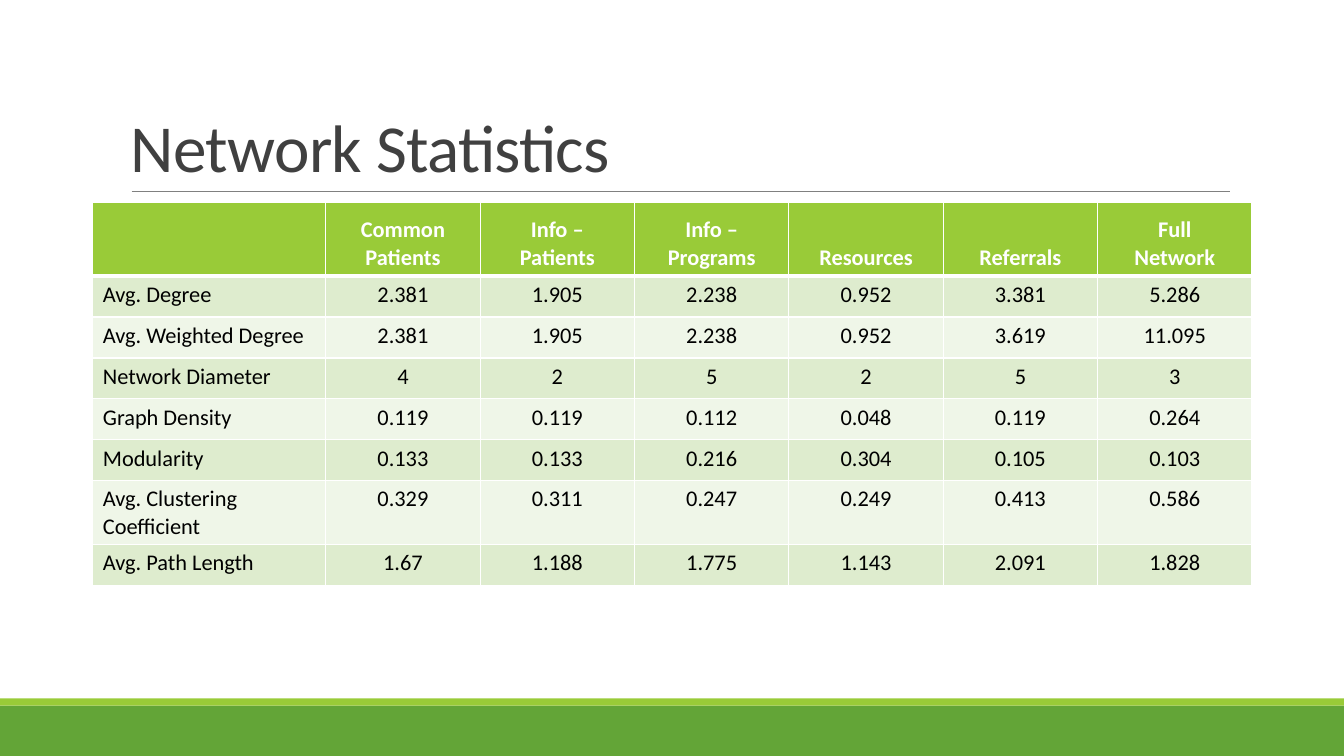
from lxml.etree import SubElement
from pptx import Presentation
from pptx.dml.color import RGBColor
from pptx.enum.shapes import MSO_CONNECTOR as Connector, MSO_SHAPE as Shape
from pptx.enum.text import MSO_ANCHOR as Anchor, PP_ALIGN as Align
from pptx.oxml.ns import qn
from pptx.util import Cm, Pt

COLORS = {
    "green": "63A537",
    "lime": "99CB38",
    "rule": "808080",
    "title": "404040",
    "band_dark": "DEECCE",
    "band_light": "EFF6E8",
    "black": "000000",
    "white": "FFFFFF",
}

HEADERS = ["", "Common Patients", "Info –\nPatients", "Info – Programs",
           "Resources", "Referrals", "Full\nNetwork"]
STATISTICS = [
    ["Avg. Degree", "2.381", "1.905", "2.238", "0.952", "3.381", "5.286"],
    ["Avg. Weighted Degree", "2.381", "1.905", "2.238", "0.952", "3.619", "11.095"],
    ["Network Diameter", "4", "2", "5", "2", "5", "3"],
    ["Graph Density", "0.119", "0.119", "0.112", "0.048", "0.119", "0.264"],
    ["Modularity", "0.133", "0.133", "0.216", "0.304", "0.105", "0.103"],
    ["Avg. Clustering Coefficient", "0.329", "0.311", "0.247", "0.249", "0.413", "0.586"],
    ["Avg. Path Length", "1.67", "1.188", "1.775", "1.143", "2.091", "1.828"],
]


class SlideBuilder:
    """Holds the style and the current slide; lengths are in centimetres."""

    font_name = "Calibri"

    def __init__(self, page):
        self.page = page

    def color(self, name):
        return RGBColor.from_string(COLORS[name])

    def style(self, para, size, color, bold=False, align=Align.LEFT):
        para.alignment = align
        font = para.font
        font.name, font.size, font.bold = self.font_name, Pt(size), bold
        font.color.rgb = self.color(color)

    def bar(self, left, top, width, height, color):
        box = self.page.shapes.add_shape(
            Shape.RECTANGLE, Cm(left), Cm(top), Cm(width), Cm(height))
        box.shadow.inherit = False
        box.fill.solid()
        box.fill.fore_color.rgb = self.color(color)
        box.line.fill.background()

    def rule(self, left, right, top, color, width):
        line = self.page.shapes.add_connector(
            Connector.STRAIGHT, Cm(left), Cm(top), Cm(right), Cm(top))
        line.line.color.rgb = self.color(color)
        line.line.width = Pt(width)
        SubElement(line._element.spPr, qn("a:effectLst"))

    def title(self, left, top, width, height, text):
        box = self.page.shapes.add_textbox(Cm(left), Cm(top), Cm(width), Cm(height))
        frame = box.text_frame
        frame.word_wrap = True
        frame.vertical_anchor = Anchor.BOTTOM
        para = frame.paragraphs[0]
        para.line_spacing = 0.85
        span = para.add_run()
        span.text = text
        span.font._element.set("spc", "-50")
        self.style(para, 48, "title")

    def borders(self, cell, top, bottom):
        widths = {"a:lnL": 1, "a:lnR": 1, "a:lnT": top, "a:lnB": bottom}
        properties = cell._tc.get_or_add_tcPr()
        for tag, width in widths.items():
            line = SubElement(properties, qn(tag), w=str(Pt(width)))
            fill = SubElement(line, qn("a:solidFill"))
            SubElement(fill, qn("a:srgbClr"), val=COLORS["white"])

    def cell(self, cell, text, row, column):
        is_header = row == 0
        self.borders(cell, top=3 if row == 1 else 1, bottom=3 if is_header else 1)
        band = "band_dark" if row % 2 else "band_light"
        cell.fill.solid()
        cell.fill.fore_color.rgb = self.color("lime" if is_header else band)
        cell.vertical_anchor = Anchor.BOTTOM if is_header else Anchor.TOP
        cell.text_frame.text = text
        for para in cell.text_frame.paragraphs:
            self.style(para, 16, "white" if is_header else "black", is_header,
                       Align.CENTER if column else Align.LEFT)

    def table(self, left, top, widths, heights, rows):
        frame = self.page.shapes.add_table(
            len(rows), len(widths), Cm(left), Cm(top),
            Cm(sum(widths)), Cm(sum(heights)))
        table = frame.table
        for column, width in zip(table.columns, widths):
            column.width = Cm(width)
        for line, height in zip(table.rows, heights):
            line.height = Cm(height)
        for row, texts in enumerate(rows):
            for column, text in enumerate(texts):
                self.cell(table.cell(row, column), text, row, column)


def main():
    deck = Presentation()
    deck.slide_width, deck.slide_height = Cm(33.87), Cm(19.05)
    builder = SlideBuilder(deck.slides.add_slide(deck.slide_layouts[6]))

    # Footer bands
    builder.bar(0, 17.78, 33.87, 1.27, "green")
    builder.bar(0, 17.6, 33.87, 0.18, "lime")

    # Title and rule
    builder.rule(3.32, 31.0, 4.82, "rule", 0.5)
    builder.title(3.05, 0.79, 27.94, 4.03, "Network Statistics")

    # Statistics table
    builder.table(2.34, 5.09, [5.87] + [3.89] * 6,
                  [1.87] + [1.03] * len(STATISTICS), [HEADERS] + STATISTICS)

    deck.save("out.pptx")


if __name__ == "__main__":
    main()
